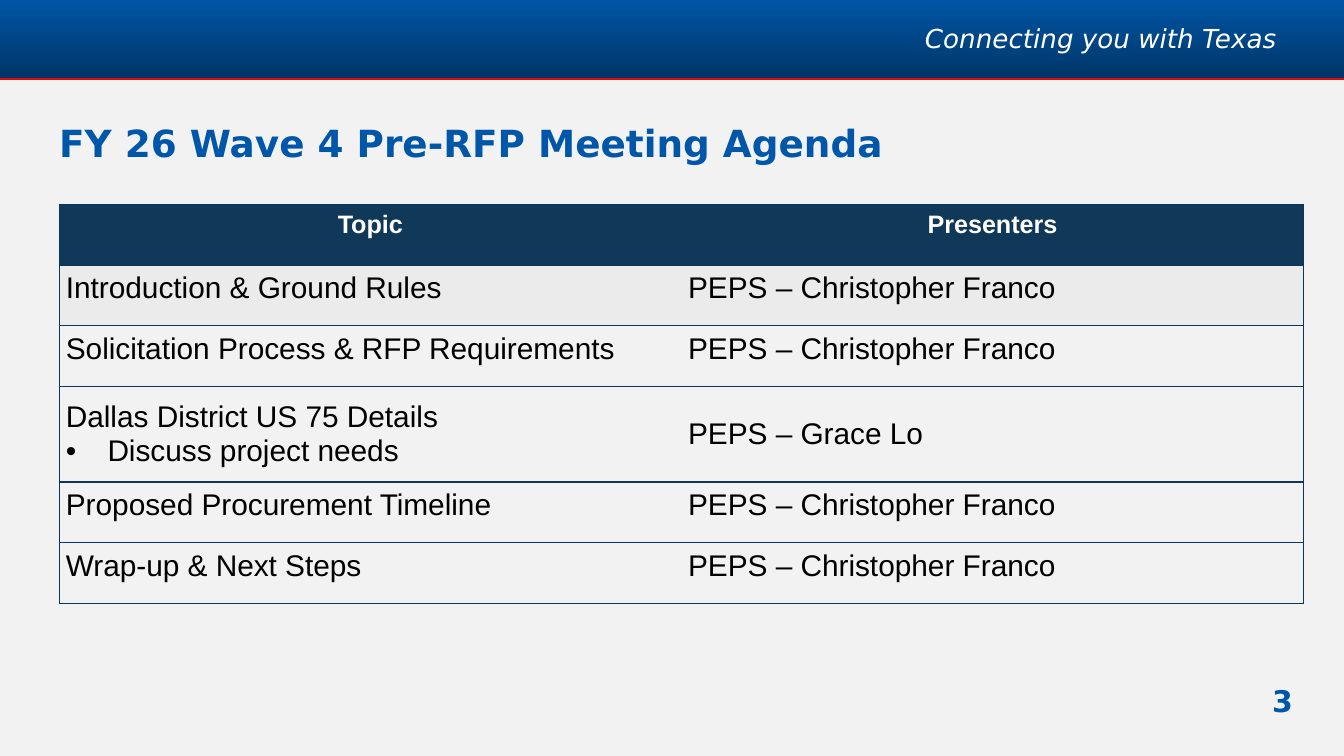
from lxml import etree
from pptx import Presentation, util as u
from pptx.dml.color import RGBColor
from pptx.enum import shapes, text
from pptx.oxml import ns

WIDTH = 10
HEIGHT = WIDTH * 9 / 16
LEFT = 0.44
BLUE, NAVY, BORDER, PAPER = "0056A9", "0F3859", "0D3759", "F2F2F2"
HEADING = {"name": "DejaVu Sans", "size": u.Pt(20), "bold": True, "color": BLUE}
TAGLINE = {"name": "DejaVu Sans", "size": u.Pt(14), "italic": True, "color": "FFFFFF"}
NUMBER = HEADING | {"size": u.Pt(16)}
HEADER = {"name": "Arial", "size": u.Pt(13.5), "bold": True, "color": "FFFFFF"}
BODY = {"name": "Arial", "size": u.Pt(16), "bold": False, "color": "000000"}

HOST = "PEPS – Christopher Franco"
AGENDA = [
    ("Topic", "Presenters"),
    ("Introduction & Ground Rules", HOST),
    ("Solicitation Process & RFP Requirements", HOST),
    ("Dallas District US 75 Details\n• Discuss project needs", "PEPS – Grace Lo"),
    ("Proposed Procurement Timeline", HOST),
    ("Wrap-up & Next Steps", HOST),
]
TABLE_HEIGHT, TALL_ROW_HEIGHT, TALL_ROW = 2.97, 0.71, 3
ROW_HEIGHT = (TABLE_HEIGHT - TALL_ROW_HEIGHT) / (len(AGENDA) - 1)


def color(value):
    return RGBColor.from_string(value)


def inches(*lengths):
    return [u.Inches(length) for length in lengths]


def style_font(font, style):
    for name, value in style.items():
        if name == "color":
            font.color.rgb = color(value)
        else:
            setattr(font, name, value)


def set_margins(target, margin):
    for side in ("left", "top", "right", "bottom"):
        setattr(target, f"margin_{side}", u.Inches(margin))


def format_frame(frame, anchor, wrap):
    frame.auto_size = text.MSO_AUTO_SIZE.NONE
    frame.word_wrap = wrap
    frame.vertical_anchor = anchor
    set_margins(frame, 0)


def add_band(page):
    # Gradient band with a red rule beneath it
    band = page.shapes.add_shape(
        shapes.MSO_SHAPE.RECTANGLE, *inches(-0.01, -0.03, WIDTH + 0.02, 0.62))
    band.shadow.inherit = False
    band.line.fill.background()
    band.fill.gradient()
    band.fill.gradient_angle = 270
    for stop, value in zip(band.fill.gradient_stops, ("0057A8", "003567")):
        stop.color.rgb = color(value)
    rule = page.shapes.add_connector(
        shapes.MSO_CONNECTOR.STRAIGHT, *inches(-0.01, 0.59, WIDTH + 0.01, 0.59))
    rule.line.color.rgb = color("D90D0D")
    rule.line.width = u.Pt(1)
    etree.SubElement(rule._element.spPr, ns.qn("a:effectLst"))


def add_label(page, words, place, anchor, style):
    box = page.shapes.add_textbox(*inches(*place))
    format_frame(box.text_frame, anchor, False)
    para = box.text_frame.paragraphs[0]
    para.text = words
    para.alignment = text.PP_ALIGN.RIGHT
    para.line_spacing = 0.9
    style_font(para.font, style)


def set_title(page, words):
    title = page.shapes.title
    title.left, title.top, title.width, title.height = inches(LEFT, 0.91, 9, 0.32)
    format_frame(title.text_frame, text.MSO_ANCHOR.BOTTOM, True)
    para = title.text_frame.paragraphs[0]
    para.text = words
    para.alignment = text.PP_ALIGN.LEFT
    style_font(para.font, HEADING)


def set_borders(cell, visible):
    properties = cell._tc.get_or_add_tcPr()
    for side in "LRTB":
        line = etree.SubElement(properties, ns.qn(f"a:ln{side}"), w=str(u.Pt(0.75)))
        if side in visible:
            fill = etree.SubElement(line, ns.qn("a:solidFill"))
            etree.SubElement(fill, ns.qn("a:srgbClr"), val=BORDER)
        else:
            etree.SubElement(line, ns.qn("a:noFill"))


def add_bullet(para):
    properties = para._p.get_or_add_pPr()
    properties.set("marL", str(u.Inches(0.31)))
    properties.set("indent", str(u.Inches(-0.31)))
    etree.SubElement(properties, ns.qn("a:buFont"), typeface="Arial")
    etree.SubElement(properties, ns.qn("a:buChar"), char="•")


def fill_cell(cell, words, row, column):
    is_header = row == 0
    set_borders(cell, "TB" + "LR"[column])
    cell.fill.solid()
    cell.fill.fore_color.rgb = color({0: NAVY, 1: "EBEBEB"}.get(row, PAPER))
    if row == TALL_ROW:
        cell.vertical_anchor = text.MSO_ANCHOR.MIDDLE
    if not is_header:
        set_margins(cell, 0.05)
    cell.text = words.replace("• ", "")
    for para, line in zip(cell.text_frame.paragraphs, words.split("\n")):
        if line.startswith("•"):
            add_bullet(para)
        para.alignment = text.PP_ALIGN.CENTER if is_header else text.PP_ALIGN.LEFT
        for span in para.runs:
            style_font(span.font, HEADER if is_header else BODY)


def add_agenda(page):
    frame = page.shapes.add_table(
        len(AGENDA), 2, *inches(LEFT, 1.52, 9.26, TABLE_HEIGHT))
    table = frame.table
    table.horz_banding = False
    for row, entries in enumerate(AGENDA):
        height = TALL_ROW_HEIGHT if row == TALL_ROW else ROW_HEIGHT
        table.rows[row].height = u.Inches(height)
        for column, words in enumerate(entries):
            fill_cell(table.cell(row, column), words, row, column)


def main():
    deck = Presentation()
    deck.slide_width, deck.slide_height = inches(WIDTH, HEIGHT)
    page = deck.slides.add_slide(deck.slide_layouts.get_by_name("Title Only"))
    page.background.fill.solid()
    page.background.fill.fore_color.rgb = color(PAPER)

    # Header and page number
    add_band(page)
    add_label(page, "3", (8.62, 5.03, 1, 0.32), text.MSO_ANCHOR.BOTTOM, NUMBER)
    add_label(page, "Connecting you with Texas", (6.3, 0, 3.2, 0.6),
              text.MSO_ANCHOR.MIDDLE, TAGLINE)

    # Title and agenda
    set_title(page, "FY 26 Wave 4 Pre-RFP Meeting Agenda")
    add_agenda(page)
    deck.save("out.pptx")


if __name__ == "__main__":
    main()
